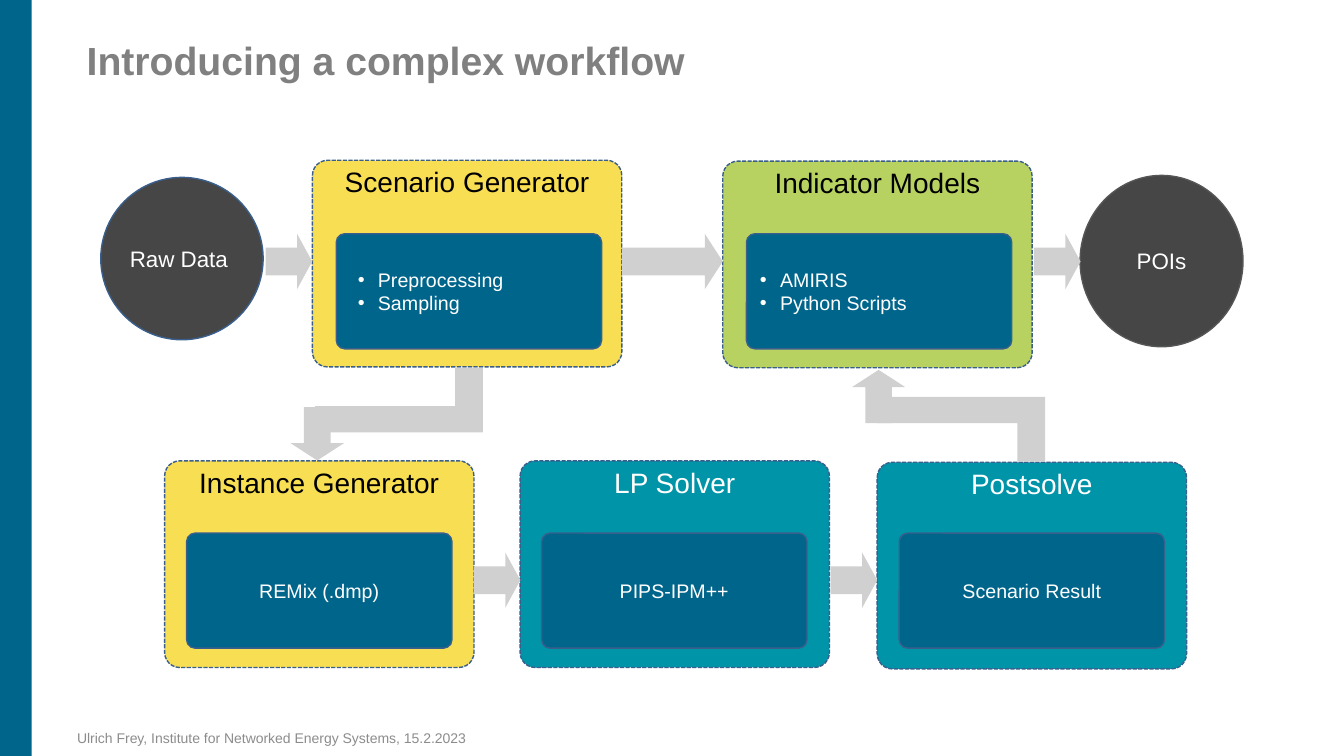
from dataclasses import dataclass

from lxml.etree import SubElement
from pptx import Presentation
from pptx.dml.color import RGBColor
from pptx.enum.dml import MSO_LINE
from pptx.enum.shapes import MSO_SHAPE as Preset
from pptx.enum.text import MSO_ANCHOR as Anchor, MSO_AUTO_SIZE as AutoSize, PP_ALIGN as Align
from pptx.oxml.ns import qn
from pptx.util import Pt


@dataclass(frozen=True)
class Theme:
    font: str = "Arial"
    title_size: int = 28
    heading_size: int = 20
    circle_size: int = 16
    panel_size: int = 14
    footer_size: int = 10
    white: str = "FFFFFF"
    black: str = "000000"
    title: str = "808080"
    footer: str = "8C8C8C"
    blue: str = "00658B"
    teal: str = "0094A8"
    yellow: str = "F8DE53"
    green: str = "B7D260"
    dark: str = "464646"
    arrow: str = "D0D0D0"
    outline: str = "3A5F8C"
    dark_outline: str = "555658"


theme = Theme()


def add_text(paragraph, text, size, color, bold=False):
    run = paragraph.add_run()
    run.text = text
    run.font.name = theme.font
    run.font.size = Pt(size)
    run.font.bold = bold
    run.font.color.rgb = RGBColor.from_string(color)


def add_block(preset, left, top, width, height, fill, outline=None, adjustments=()):
    """Add a flat filled shape with zero text margins."""
    shape = slide.shapes.add_shape(preset, Pt(left), Pt(top), Pt(width), Pt(height))
    shape.shadow.inherit = False
    shape.fill.solid()
    shape.fill.fore_color.rgb = RGBColor.from_string(fill)
    if outline:
        shape.line.color.rgb = RGBColor.from_string(outline)
        shape.line.width = Pt(1)
    else:
        shape.line.fill.background()
    for index, value in enumerate(adjustments):
        shape.adjustments[index] = value
    frame = shape.text_frame
    frame.margin_left = frame.margin_top = frame.margin_right = frame.margin_bottom = 0
    frame.vertical_anchor = Anchor.MIDDLE
    frame.paragraphs[0].alignment = Align.CENTER
    return shape


presentation = Presentation()
presentation.slide_width = Pt(960)
presentation.slide_height = Pt(540)
slide = presentation.slides.add_slide(presentation.slide_layouts[5])

# Page frame: side bar, footer and title
add_block(Preset.RECTANGLE, 0, 0, 22.6, 540, theme.blue)

footer = slide.shapes.add_textbox(Pt(48), Pt(517.7), Pt(324), Pt(20))
footer.text_frame.word_wrap = True
add_text(footer.text_frame.paragraphs[0],
         "Ulrich Frey, Institute for Networked Energy Systems, 15.2.2023",
         theme.footer_size, theme.footer)

title = slide.shapes.title
title.left, title.top, title.width, title.height = Pt(54.7), Pt(26), Pt(792), Pt(77.8)
title.text_frame.auto_size = AutoSize.NONE
title.text_frame.vertical_anchor = Anchor.TOP
heading = title.text_frame.paragraphs[0]
heading.alignment = Align.LEFT
heading.line_spacing = 0.9
add_text(heading, "Introducing a complex workflow", theme.title_size, theme.title, bold=True)

# Input and output circles
circles = [
    ("Raw Data ", 72, 126.7, 116, 116, theme.outline),
    ("POIs", 771.5, 125.3, 116.4, 122.4, theme.dark_outline),
]
for label, left, top, width, height, outline in circles:
    circle = add_block(Preset.OVAL, left, top, width, height, theme.dark, outline)
    add_text(circle.text_frame.paragraphs[0], label, theme.circle_size, theme.white)

# Cards: heading, left, top, fill, heading colour, panel left and top, lines, bullet indent
upper_panel, lower_panel = 167, 380.8
cards = [
    ("Scenario Generator", 223.2, 114.5, theme.yellow, theme.black,
     240.2, upper_panel, ["Preprocessing", "Sampling"], 28),
    ("Indicator Models", 516.3, 115.1, theme.green, theme.black,
     533.2, upper_panel, ["AMIRIS", "Python Scripts"], 22.3),
    ("Instance Generator", 117.6, 329.2, theme.yellow, theme.black,
     133.3, lower_panel, ["REMix (.dmp)"], 0),
    ("LP Solver", 371.5, 329.2, theme.teal, theme.white,
     386.9, lower_panel, ["PIPS-IPM++"], 0),
    ("Postsolve", 626.6, 330.2, theme.teal, theme.white,
     642.3, lower_panel, ["Scenario Result"], 0),
]
rounding = [0.073]
for name, left, top, fill, color, panel_left, panel_top, lines, indent in cards:
    card = add_block(Preset.ROUNDED_RECTANGLE, left, top, 221, 147.6, fill,
                     theme.outline, rounding)
    card.line.dash_style = MSO_LINE.SQUARE_DOT
    card.text_frame.vertical_anchor = Anchor.TOP
    add_text(card.text_frame.paragraphs[0], name, theme.heading_size, color)

    panel = add_block(Preset.ROUNDED_RECTANGLE, panel_left, panel_top, 189.5, 82.2,
                      theme.blue, theme.outline, rounding)
    frame = panel.text_frame
    for index, line in enumerate(lines):
        paragraph = frame.add_paragraph() if index else frame.paragraphs[0]
        if indent:
            paragraph.alignment = Align.LEFT
            properties = paragraph._p.get_or_add_pPr()
            properties.set("marL", str(Pt(indent)))
            properties.set("indent", str(-Pt(14.4)))
            SubElement(properties, qn("a:buFont"), typeface=theme.font)
            SubElement(properties, qn("a:buChar"), char="•")
        add_text(paragraph, line, theme.panel_size, theme.white)

# Block arrows
arrows = [
    (Preset.RIGHT_ARROW, 189.7, 167, 33.3, 39.6),
    (Preset.RIGHT_ARROW, 444.3, 167, 72, 39.6),
    (Preset.RIGHT_ARROW, 738.5, 167, 33.3, 39.6),
    (Preset.RIGHT_ARROW, 338.4, 394.6, 33.3, 39.6),
    (Preset.RIGHT_ARROW, 593.3, 394.6, 33.3, 39.6),
    (Preset.UP_ARROW, 608.6, 264.2, 38, 38),
    (Preset.DOWN_ARROW, 207.6, 290.9, 38, 38),
]
for preset, left, top, width, height in arrows:
    add_block(preset, left, top, width, height, theme.arrow, adjustments=[0.5, 0.324])

# Elbows that lead into the vertical arrows
elbow_shape = [0.405, 0.429]
elbow_up = add_block(Preset.CORNER, 626.6, 283.5, 120, 46.2, theme.arrow,
                     adjustments=elbow_shape)
elbow_up.rotation = 180
elbow_down = add_block(Preset.CORNER, 225.2, 262.6, 119.8, 46.2, theme.arrow,
                       adjustments=elbow_shape)
elbow_down._element.spPr.find(qn("a:xfrm")).set("flipH", "1")

presentation.save("out.pptx")
